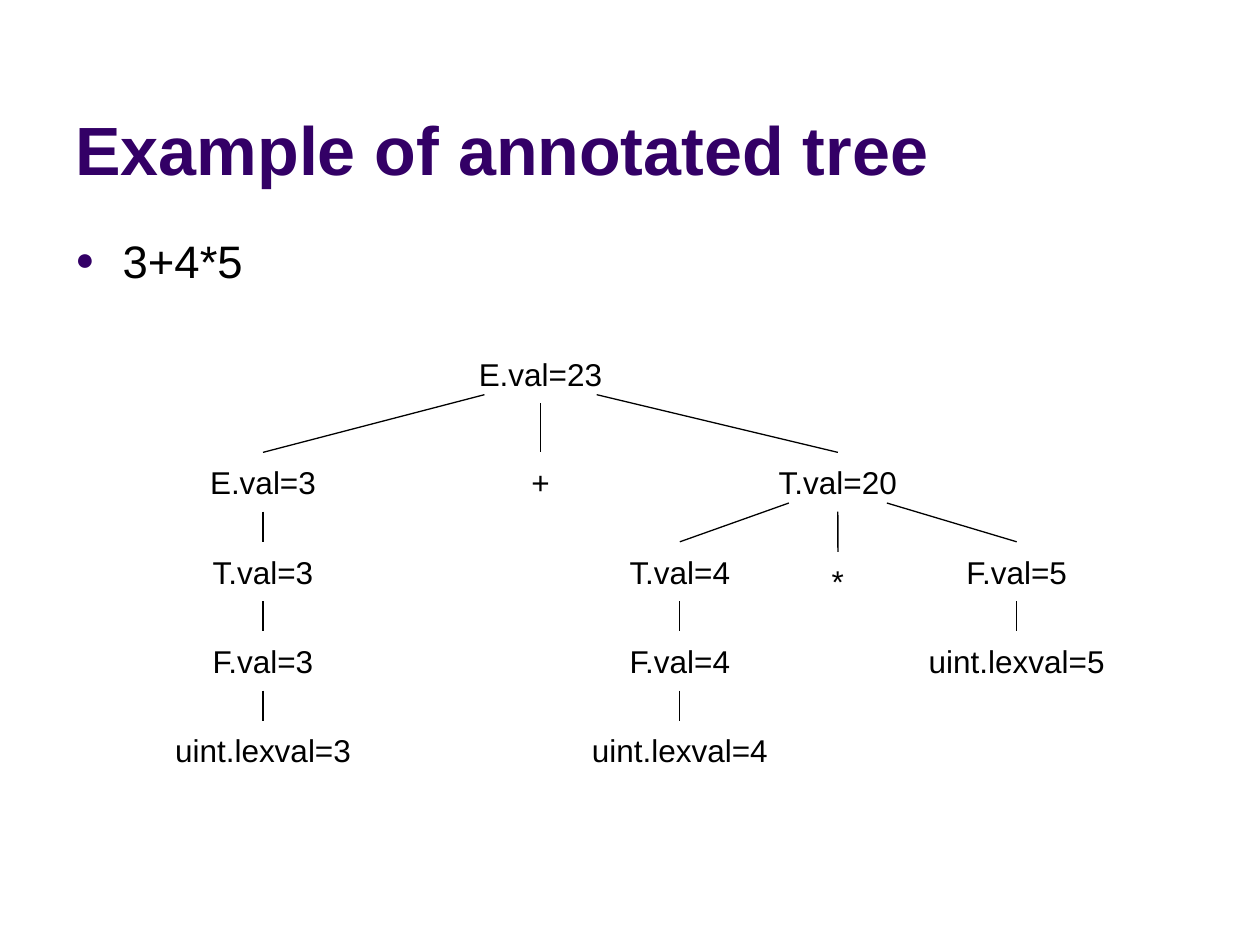
import math
import pptx
import pptx.util
import pptx.dml.color
import pptx.enum.shapes
import pptx.enum.text
import pptx.oxml
import pptx.oxml.ns
import lxml.etree

Pt = pptx.util.Pt
TEXT = pptx.enum.text
HUES = {"head": "330066", "ink": "000000"}
HIGH = 33.9
ROWS = [0, 61.9, 113, 164.1, 215.2]
TREE = ("E.val=23", 215.3, ROWS[0], 90.7, [
    ("E.val=3", 56.7, ROWS[1], 68, [
        ("T.val=3", 56.7, ROWS[2], 68, [
            ("F.val=3", 56.7, ROWS[3], 68, [
                ("uint.lexval=3", 56.7, ROWS[4], 113.4, [])])])]),
    ("+", 215.3, ROWS[1], HIGH, []),
    ("T.val=20", 385.2, ROWS[1], 79.2, [
        ("T.val=4", 294.9, ROWS[2], 68, [
            ("F.val=4", 294.9, ROWS[3], 68, [
                ("uint.lexval=4", 294.9, ROWS[4], 113.4, [])])]),
        ("*", 385.2, 118.7, HIGH, []),
        ("F.val=5", 487.4, ROWS[2], 68, [
            ("uint.lexval=5", 487.4, ROWS[3], 113.4, [])])])])


def color(name):
    """Return the named colour."""
    return pptx.dml.color.RGBColor.from_string(HUES[name])


def apply(thing, form):
    """Set each format value on the thing."""
    for key, value in form.items():
        setattr(thing, key, value)


def write(shape, words, hue, frame, font):
    """Write one styled paragraph into a shape and return it."""
    apply(shape.text_frame, frame)
    para = shape.text_frame.paragraphs[0]
    run = para.add_run()
    run.text = words
    apply(run.font, {"name": "Arial", **font})
    run.font.color.rgb = color(hue)
    return para


def add_title(slide, left, top, width, height):
    """Place the heading in its box."""
    box = slide.shapes.add_textbox(Pt(left), Pt(top), Pt(width), Pt(height))
    write(box, "Example of annotated tree", "head",
          {"word_wrap": True, "vertical_anchor": TEXT.MSO_ANCHOR.BOTTOM},
          {"size": Pt(39), "bold": True})


def add_body(slide, left, top, width, height):
    """Place the bulleted expression in its box."""
    box = slide.shapes.add_textbox(Pt(left), Pt(top), Pt(width), Pt(height))
    para = write(box, "3+4*5", "ink", {"word_wrap": True}, {"size": Pt(26)})
    apply(para, {"line_spacing": 0.8, "space_before": Pt(5.2)})
    props = para._p.get_or_add_pPr()
    props.set("marL", str(Pt(27)))
    props.set("indent", str(Pt(-27)))
    tag = pptx.oxml.ns.qn
    hue = lxml.etree.SubElement(props, tag("a:buClr"))
    lxml.etree.SubElement(hue, tag("a:srgbClr"), val=HUES["head"])
    lxml.etree.SubElement(props, tag("a:buSzPct"), val="70000")
    lxml.etree.SubElement(props, tag("a:buFont"), typeface="Arial")
    lxml.etree.SubElement(props, tag("a:buChar"), char="●")


def add_edge(slide, start, child):
    """Draw a line from a point to the top of a child node."""
    line = slide.shapes.add_connector(
        pptx.enum.shapes.MSO_CONNECTOR.STRAIGHT, *start, *start)
    line.end_connect(child, 0)
    line.line.width = Pt(0.75)
    line.line.color.rgb = color("ink")
    lxml.etree.SubElement(line._element.spPr, pptx.oxml.ns.qn("a:effectLst"))


def add_tree(slide, left, top, node):
    """Place a node and all its branches, and return its shape."""
    words, mid, down, width, kids = node
    oval = slide.shapes.add_shape(
        pptx.enum.shapes.MSO_SHAPE.OVAL, Pt(left + mid - width / 2),
        Pt(top + down), Pt(width), Pt(HIGH))
    oval.shadow.inherit = False
    oval.fill.background()
    oval.line.fill.background()
    para = write(oval, words, "ink",
                 {"word_wrap": False, "vertical_anchor": TEXT.MSO_ANCHOR.MIDDLE},
                 {"size": Pt(18)})
    para.alignment = TEXT.PP_ALIGN.CENTER
    for rank, kid in enumerate(kids):
        turn = math.radians(45 * (rank - (len(kids) - 1) / 2))
        start = (Pt(left + mid + width / 2 * math.sin(turn)),
                 Pt(top + down + HIGH / 2 * (1 + math.cos(turn))))
        add_edge(slide, start, add_tree(slide, left, top, kid))
    return oval


def main():
    """Build and save the slide."""
    deck = pptx.Presentation()
    apply(deck, {"slide_width": Pt(720), "slide_height": Pt(540)})
    slide = deck.slides.add_slide(deck.slide_layouts[6])
    add_title(slide, 36, 9.4, 594, 102.2)
    add_body(slide, 36, 135.4, 648, 32.4)
    add_tree(slide, 93.6, 196.6, TREE)
    deck.save("out.pptx")


if __name__ == "__main__":
    main()
